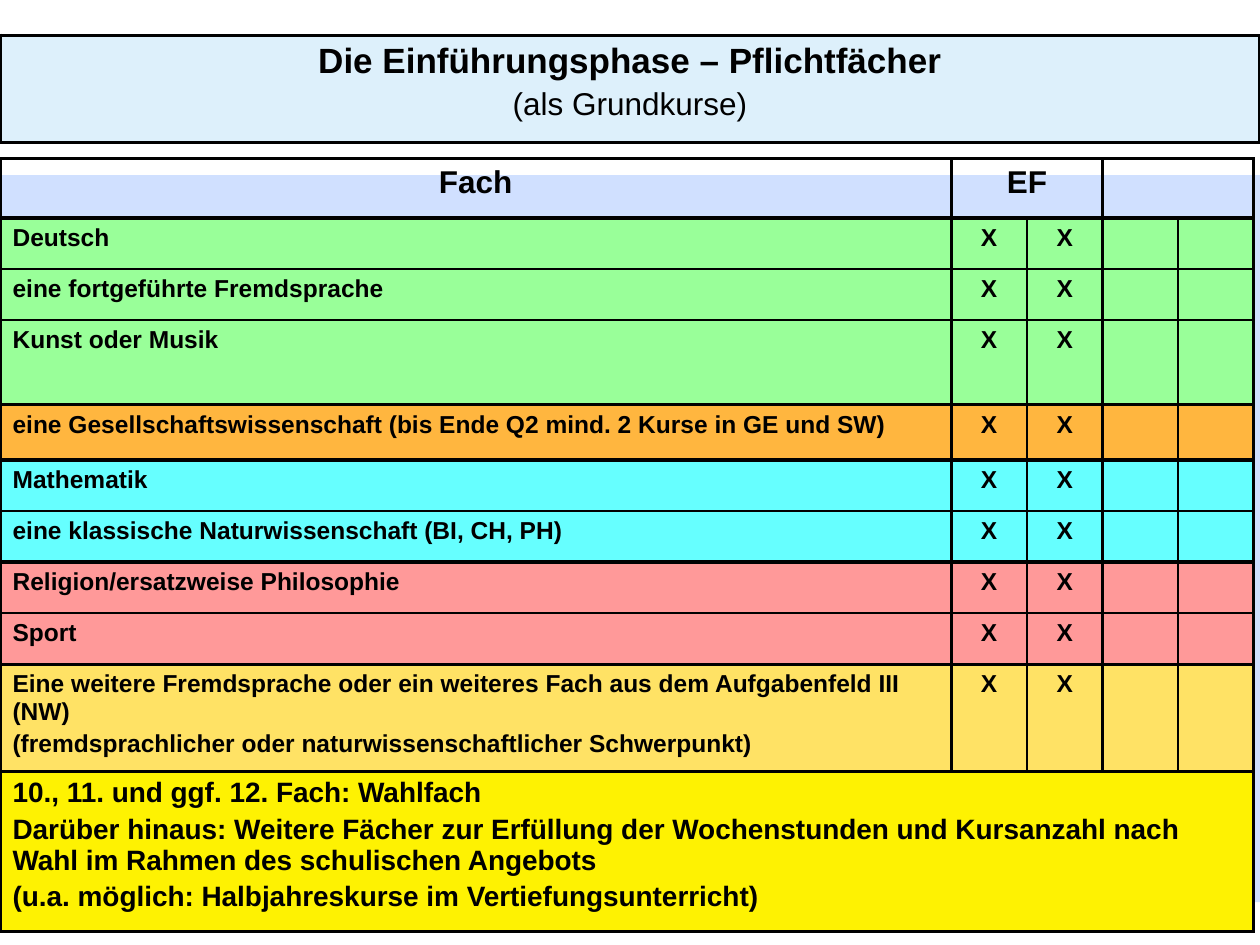
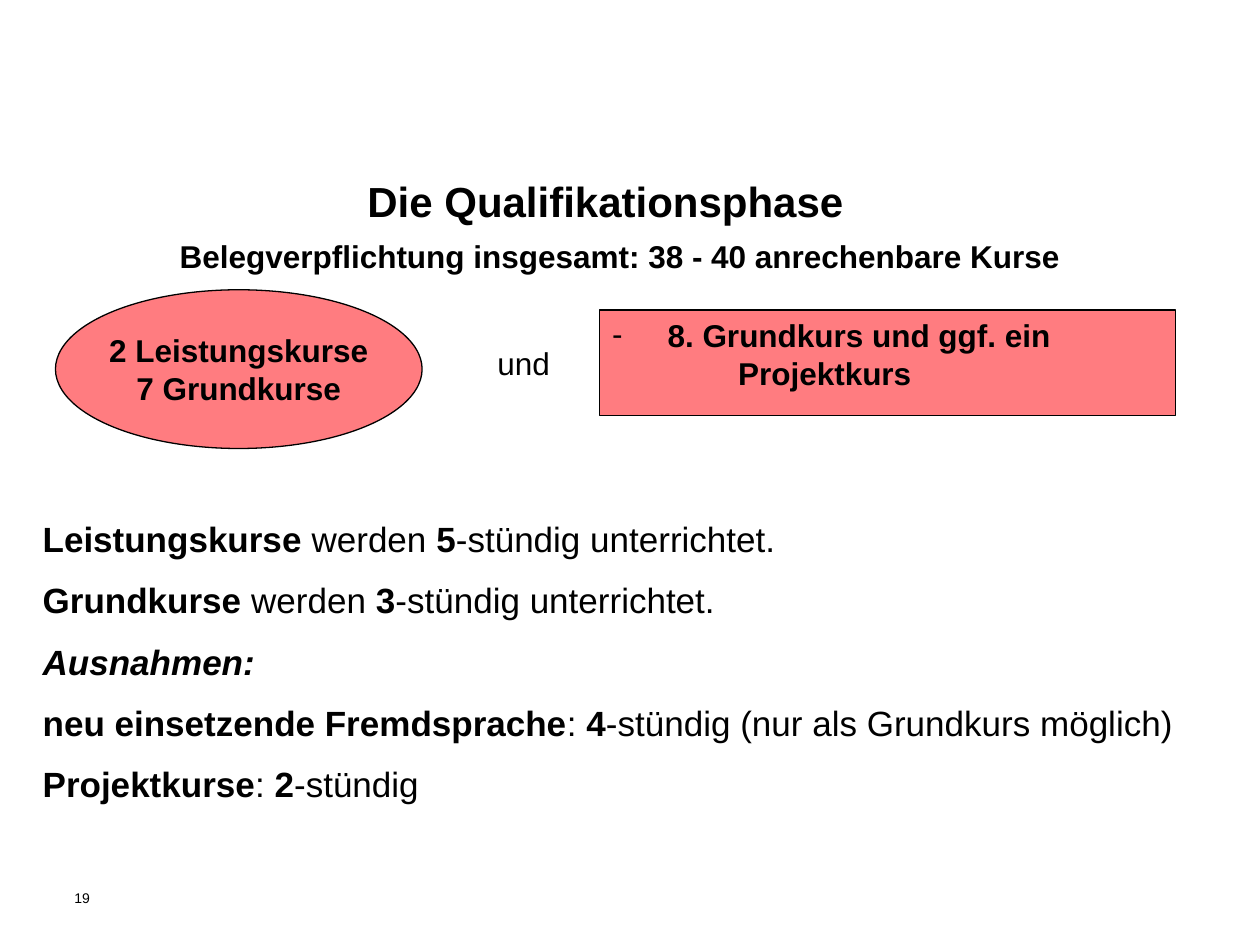
from lxml.etree import SubElement
from pptx import Presentation
from pptx.dml.color import RGBColor as RGB
from pptx.enum.shapes import MSO_SHAPE as SHAPE
from pptx.enum.text import MSO_ANCHOR as ANCHOR, PP_ALIGN as ALIGN
from pptx.oxml import parse_xml
from pptx.oxml.ns import nsdecls, qn
from pptx.util import Inches, Pt

FONT = "Arial"
BLACK = RGB(0x00, 0x00, 0x00)
BAND = RGB(0x66, 0x99, 0xFF)
TITLE_FILL = RGB(0xDD, 0xF0, 0xFB)
GREEN = RGB(0x99, 0xFF, 0x99)
ORANGE = RGB(0xFF, 0xB6, 0x3F)
CYAN = RGB(0x66, 0xFF, 0xFF)
PINK = RGB(0xFF, 0x99, 0x99)
SAND = RGB(0xFF, 0xE2, 0x65)
YELLOW = RGB(0xFE, 0xF2, 0x02)
CORAL = RGB(0xFF, 0x7C, 0x80)

WIDTH, HEIGHT = Inches(10), Inches(7.5)
COLUMN, ROW = WIDTH // 100, HEIGHT // 75
THICK, THIN = 2.25, 1

SUBJECT_COLUMNS = [75.5, 6, 6, 6, 6]
HEADER_ROW, ELECTIVE_ROW = 4.7, 12.7
SUBJECTS = [
    (GREEN, 3.9, ["Deutsch"]),
    (GREEN, 3.9, ["eine fortgeführte Fremdsprache"]),
    (GREEN, 6.7, ["Kunst oder Musik"]),
    (ORANGE, 4.4, ["eine Gesellschaftswissenschaft (bis Ende Q2 mind. 2 Kurse in GE und SW)"]),
    (CYAN, 3.9, ["Mathematik"]),
    (CYAN, 3.9, ["eine klassische Naturwissenschaft (BI, CH, PH)"]),
    (PINK, 3.9, ["Religion/ersatzweise Philosophie"]),
    (PINK, 4, ["Sport"]),
    (SAND, 8.5, [
        "Eine weitere Fremdsprache oder ein weiteres Fach aus dem Aufgabenfeld III (NW)",
        "(fremdsprachlicher oder naturwissenschaftlicher Schwerpunkt)"]),
]
ELECTIVES = [
    "10., 11. und ggf. 12. Fach: Wahlfach",
    "Darüber hinaus: Weitere Fächer zur Erfüllung der Wochenstunden und "
    "Kursanzahl nach Wahl im Rahmen des schulischen Angebots",
    "(u.a. möglich: Halbjahreskurse im Vertiefungsunterricht)",
]
HOURS = [
    [("Leistungskurse", "b"), (" werden ", ""), ("5", "b"), ("-stündig unterrichtet.", "")],
    [("Grundkurse", "b"), (" werden ", ""), ("3", "b"), ("-stündig unterrichtet.", "")],
    [("Ausnahmen:", "bi")],
    [("neu einsetzende Fremdsprache", "b"), (": ", ""), ("4", "b"),
     ("-stündig (nur als Grundkurs möglich)", "")],
    [("Projektkurse", "b"), (": ", ""), ("2", "b"), ("-stündig", "")],
]


def area(x, y, w, h):
    return [round(n) for n in (x * COLUMN, y * ROW, w * COLUMN, h * ROW)]


def add_run(p, text, size, style=""):
    r = p.add_run()
    r.text = text
    r.font.name, r.font.size = FONT, Pt(size)
    r.font.bold, r.font.italic = "b" in style, "i" in style
    r.font.color.rgb = BLACK


def write(tf, paragraphs, size, align=ALIGN.LEFT, gap=0):
    for i, runs in enumerate(paragraphs):
        p = tf.add_paragraph() if i else tf.paragraphs[0]
        p.alignment = align
        if i:
            p.space_before = Pt(gap)
        for text, style in runs:
            add_run(p, text, size, style)


def write_bold(tf, lines, size, align=ALIGN.LEFT, gap=0):
    write(tf, [[(line, "b")] for line in lines], size, align, gap)


def add_text(s, place, paragraphs, size, align=ALIGN.LEFT, gap=0):
    tf = s.shapes.add_textbox(*area(*place)).text_frame
    tf.word_wrap = True
    write(tf, paragraphs, size, align, gap)
    return tf


def add_filled(s, kind, place, color, outlined=True):
    sp = s.shapes.add_shape(kind, *area(*place))
    sp.shadow.inherit = False
    sp.fill.solid()
    sp.fill.fore_color.rgb = color
    if outlined:
        sp.line.color.rgb = BLACK
        sp.line.width = Pt(0.75)
    else:
        sp.line.fill.background()
    return sp


def add_band(s):
    sp = add_filled(s, SHAPE.RECTANGLE, (0, 13.9, 100, 57.7), BAND, outlined=False)
    color = sp._element.spPr.find(".//" + qn("a:srgbClr"))
    SubElement(color, qn("a:alpha"), val="30000")


def add_grid(s, x, y, columns, rows):
    place = area(x, y, sum(columns), sum(rows))
    table = s.shapes.add_table(len(rows), len(columns), *place).table
    table.first_row = table.horz_banding = False
    for column, w in zip(table.columns, columns):
        column.width = round(w * COLUMN)
    for row, h in zip(table.rows, rows):
        row.height = round(h * ROW)
    return table


def style_cell(cell, color=None, left=THICK, right=THICK, top=THICK, bottom=THICK):
    if color is None:
        cell.fill.background()
    else:
        cell.fill.solid()
        cell.fill.fore_color.rgb = color
    sides = zip("LRTB", (left, right, top, bottom))
    for i, (side, width) in enumerate(sides):
        line = parse_xml(
            f'<a:ln{side} {nsdecls("a")} w="{Pt(width)}"><a:solidFill>'
            f'<a:srgbClr val="{BLACK}"/></a:solidFill></a:ln{side}>')
        cell._tc.get_or_add_tcPr().insert(i, line)


def add_title_table(s):
    cell = add_grid(s, 0, 2.8, [100], [8.5]).cell(0, 0)
    style_cell(cell, TITLE_FILL)
    tf = cell.text_frame
    write_bold(tf, ["Die Einführungsphase – Pflichtfächer"], 20, ALIGN.CENTER)
    p = tf.add_paragraph()
    p.alignment, p.space_before = ALIGN.CENTER, Pt(3.6)
    add_run(p, "(als Grundkurse)", 18)


def add_subject_table(s):
    heights = [HEADER_ROW, *(h for _, h, _ in SUBJECTS), ELECTIVE_ROW]
    table = add_grid(s, 0, 12.6, SUBJECT_COLUMNS, heights)
    last = len(heights) - 1
    for first in (1, 3):
        table.cell(0, first).merge(table.cell(0, first + 1))
    table.cell(last, 0).merge(table.cell(last, 4))

    for col in range(5):
        style_cell(table.cell(0, col))
        style_cell(table.cell(last, col), YELLOW)
    for col, text in enumerate(["Fach", "EF"]):
        write_bold(table.cell(0, col).text_frame, [text], 18, ALIGN.CENTER)
    write_bold(table.cell(last, 0).text_frame, ELECTIVES, 16, gap=3)

    colors = [None, *(color for color, _, _ in SUBJECTS), YELLOW]
    for row, (color, _, lines) in enumerate(SUBJECTS, 1):
        top = THIN if colors[row - 1] == color else THICK
        bottom = THIN if colors[row + 1] == color else THICK
        for col in range(5):
            left = THIN if col in (2, 4) else THICK
            right = THIN if col in (1, 3) else THICK
            style_cell(table.cell(row, col), color, left, right, top, bottom)
        write_bold(table.cell(row, 0).text_frame, lines, 14, gap=2.8)
        for col in (1, 2):
            write_bold(table.cell(row, col).text_frame, ["X"], 14, ALIGN.CENTER)


def add_course_ellipse(s):
    tf = add_filled(s, SHAPE.OVAL, (4.4, 23, 29.1, 12.6), CORAL).text_frame
    tf.word_wrap = False
    tf.vertical_anchor = ANCHOR.MIDDLE
    write_bold(tf, ["2 Leistungskurse", "7 Grundkurse"], 18, ALIGN.CENTER)


def add_option_box(s):
    tf = add_filled(s, SHAPE.RECTANGLE, (47.6, 24.6, 45.7, 8.4), CORAL).text_frame
    tf.vertical_anchor = ANCHOR.TOP
    write_bold(tf, ["8. Grundkurs und ggf. ein", "Projektkurs"], 18)
    item, follow = (p._p.get_or_add_pPr() for p in tf.paragraphs)
    item.set("marL", str(round(4.4 * COLUMN)))
    item.set("indent", str(round(-4.4 * COLUMN)))
    SubElement(item, qn("a:buFont"), typeface=FONT)
    SubElement(item, qn("a:buChar"), char="-")
    follow.set("marL", str(10 * COLUMN))


def add_page_number(s, number):
    tf = add_text(s, (5.9, 70.6, 3.2, 3.7), [[(number, "")]], 8)
    tf.margin_left = tf.margin_right = tf.margin_top = tf.margin_bottom = 0


def build_introduction(s):
    add_band(s)
    add_title_table(s)
    add_subject_table(s)


def build_qualification(s):
    add_page_number(s, "19")
    add_text(s, (0, 13.4, 96.1, 5), [[("Die Qualifikationsphase", "b")]], 24, ALIGN.CENTER)
    add_text(s, (5.1, 18.3, 88.2, 4),
             [[("Belegverpflichtung insgesamt: 38 - 40 anrechenbare Kurse", "b")]],
             18, ALIGN.CENTER)
    add_course_ellipse(s)
    add_text(s, (36.2, 26.8, 10.7, 4), [[("und", "")]], 18, ALIGN.CENTER)
    add_option_box(s)
    add_text(s, (2.4, 40.6, 93.1, 25.3), HOURS, 20, gap=11)


def main():
    prs = Presentation()
    prs.slide_width, prs.slide_height = WIDTH, HEIGHT
    for build in (build_introduction, build_qualification):
        build(prs.slides.add_slide(prs.slide_layouts[6]))
    prs.save("out.pptx")


if __name__ == "__main__":
    main()
